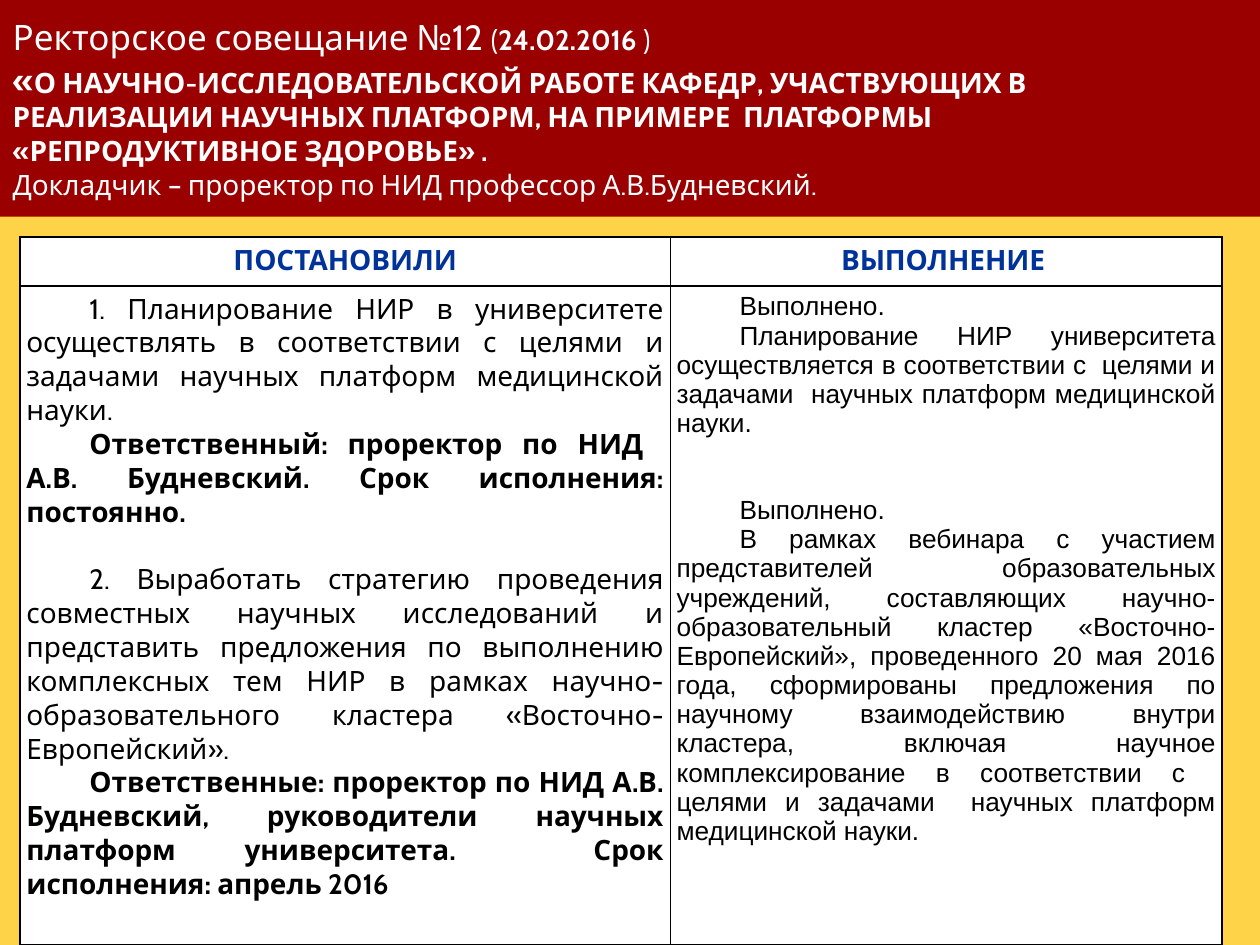
from dataclasses import dataclass

from lxml.etree import SubElement
from pptx import Presentation
from pptx.dml.color import RGBColor
from pptx.enum.text import MSO_ANCHOR, MSO_AUTO_SIZE, PP_ALIGN
from pptx.oxml.ns import qn
from pptx.util import Inches, Pt


@dataclass(frozen=True)
class Theme:
    page: str = "FFD347"
    banner: str = "9A0000"
    heading: str = "003399"
    ink: str = "000000"
    paper: str = "FFFFFF"
    main: str = "Cabin"
    plain: str = "Arial"
    large: int = 20
    medium: int = 16
    small: int = 15


THEME = Theme()
WIDTH, HEIGHT = 10, 7.5
BANNER_HEIGHT = 1.72
TABLE_LEFT, TABLE_TOP = 0.16, 1.88
COLUMNS = (5.16, 4.38)
HEADER_ROW = 0.39
ROWS = (HEADER_ROW, HEIGHT - TABLE_TOP - HEADER_ROW)
INSET, INDENT = 0.05, 0.5

# Title lines: (text, size, bold)
TITLE = [
    [("Ректорское совещание №12 ", THEME.large, False), ("(", THEME.medium, False),
     ("24.02.2016 ", THEME.medium, True), (")", THEME.medium, False)],
    [("«", THEME.large, True),
     ("О НАУЧНО-ИССЛЕДОВАТЕЛЬСКОЙ РАБОТЕ КАФЕДР, УЧАСТВУЮЩИХ В ", THEME.medium, True)],
    [("РЕАЛИЗАЦИИ НАУЧНЫХ ПЛАТФОРМ, НА ПРИМЕРЕ  ПЛАТФОРМЫ ", THEME.medium, True)],
    [("«РЕПРОДУКТИВНОЕ ЗДОРОВЬЕ» . ", THEME.medium, True)],
    [("Докладчик – проректор по НИД профессор А.В.Будневский.", THEME.medium, False)],
]
HEADINGS = ["ПОСТАНОВИЛИ", "ВЫПОЛНЕНИЕ "]

# Body paragraphs: (text, bold, points of space before)
DECISIONS = [
    ("1. Планирование НИР в университете осуществлять в соответствии с целями и "
     "задачами научных платформ медицинской науки. ", False, 0),
    ("Ответственный: проректор по НИД  А.В. Будневский. Срок исполнения: постоянно.",
     True, 0),
    ("2. Выработать стратегию проведения совместных научных исследований и представить "
     "предложения по выполнению комплексных тем НИР в рамках научно-образовательного "
     "кластера «Восточно-Европейский». ", False, 19.4),
    ("Ответственные: проректор по НИД А.В. Будневский, руководители научных платформ "
     "университета.  Срок исполнения: апрель 2016 ", True, 0),
]
RESULTS = [
    ("Выполнено. ", False, 0),
    ("Планирование НИР университета осуществляется в соответствии с  целями и задачами "
     " научных платформ медицинской науки.", False, 0),
    ("Выполнено. ", False, 33),
    ("В рамках вебинара с участием представителей образовательных учреждений, "
     "составляющих научно-образовательный кластер «Восточно-Европейский», проведенного "
     "20 мая 2016 года, сформированы предложения по научному взаимодействию внутри "
     "кластера, включая научное комплексирование в соответствии с  целями и задачами "
     " научных платформ медицинской науки.", False, 0),
]


def apply(target, **values):
    for name, value in values.items():
        setattr(target, name, value)


def paint(fill, color):
    fill.solid()
    fill.fore_color.rgb = RGBColor.from_string(color)


def add_span(para, text, size, bold, color, name=THEME.main):
    span = para.add_run()
    span.text = text
    apply(span.font, size=Pt(size), bold=bold, name=name)
    span.font.color.rgb = RGBColor.from_string(color)


def add_title(page):
    box = page.shapes.title
    apply(box, left=0, top=0, width=Inches(WIDTH), height=Inches(BANNER_HEIGHT))
    paint(box.fill, THEME.banner)
    apply(box.text_frame, word_wrap=True, auto_size=MSO_AUTO_SIZE.NONE,
          vertical_anchor=MSO_ANCHOR.MIDDLE)
    para = box.text_frame.paragraphs[0]
    para.alignment = PP_ALIGN.LEFT
    for number, line in enumerate(TITLE):
        if number:
            para.add_line_break()
        for text, size, bold in line:
            add_span(para, text, size, bold, THEME.paper)


def style_cell(cell):
    """Give the cell equal insets, a border on all sides and a white fill."""
    margin = Inches(INSET)
    apply(cell, margin_left=margin, margin_right=margin,
          margin_top=margin, margin_bottom=margin)
    properties = cell._tc.get_or_add_tcPr()
    for side in "LRTB":
        line = SubElement(properties, qn(f"a:ln{side}"), w=str(Pt(1)))
        SubElement(SubElement(line, qn("a:solidFill")), qn("a:srgbClr"), val=THEME.ink)
    paint(cell.fill, THEME.paper)


def fill_body(cell, paragraphs, size, name):
    frame = cell.text_frame
    for number, (text, bold, gap) in enumerate(paragraphs):
        para = frame.add_paragraph() if number else frame.paragraphs[0]
        apply(para, alignment=PP_ALIGN.JUSTIFY, space_before=Pt(gap))
        para._p.get_or_add_pPr().set("indent", str(Inches(INDENT)))
        add_span(para, text, size, bold, THEME.ink, name)


def add_decision_table(page):
    table = page.shapes.add_table(
        len(ROWS), len(COLUMNS), Inches(TABLE_LEFT), Inches(TABLE_TOP),
        Inches(sum(COLUMNS)), Inches(sum(ROWS))).table
    apply(table, first_row=False, horz_banding=False)
    for column, width in zip(table.columns, COLUMNS):
        column.width = Inches(width)
    for row, height in zip(table.rows, ROWS):
        row.height = Inches(height)
    for cell in table.iter_cells():
        style_cell(cell)
    for index, heading in enumerate(HEADINGS):
        para = table.cell(0, index).text_frame.paragraphs[0]
        para.alignment = PP_ALIGN.CENTER
        add_span(para, heading, THEME.medium, True, THEME.heading)
    fill_body(table.cell(1, 0), DECISIONS, THEME.medium, THEME.main)
    fill_body(table.cell(1, 1), RESULTS, THEME.small, THEME.plain)


def main():
    deck = Presentation()
    apply(deck, slide_width=Inches(WIDTH), slide_height=Inches(HEIGHT))
    page = deck.slides.add_slide(deck.slide_layouts[5])
    paint(page.background.fill, THEME.page)
    add_decision_table(page)
    add_title(page)
    deck.save("out.pptx")


if __name__ == "__main__":
    main()
